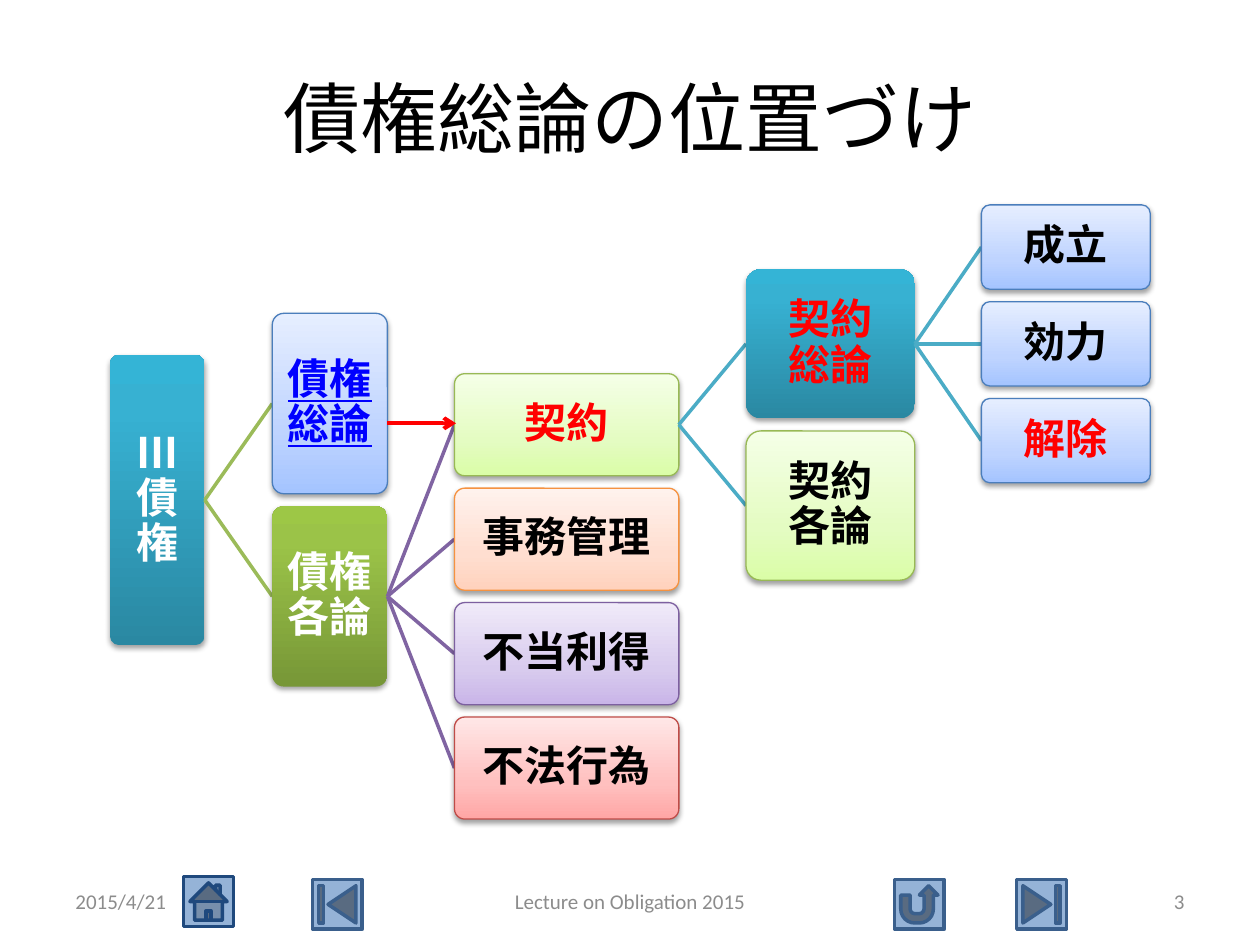
from dataclasses import dataclass, field

from pptx import Presentation
from pptx.dml.color import RGBColor
from pptx.enum import shapes, text
from pptx.oxml.ns import qn
from pptx.util import Pt
from lxml import etree


@dataclass(frozen=True)
class Skin:
    stops: tuple  # (position in percent, colour), from the bottom up
    line: str = ""


class Theme:
    font = "Calibri"
    title_size, node_size, footer_size = 44, 24, 12
    black, white, red, link = "000000", "FFFFFF", "FF0000", "0000FF"
    footer = "8C8C8C"
    button, button_line, home_line = "95B3D7", "3A5F8C", "1F497D"
    green_link, purple_link, aqua_link = "9BBB59", "8064A2", "4BACC6"
    teal = Skin(((0, "2A88A2"), (80, "37B1D2"), (100, "34B4D6")))
    olive = Skin(((0, "779737"), (80, "9BC348"), (100, "9DC746")))
    blue = Skin(((0, "A4C4FF"), (35, "BFD4FF"), (100, "E6EEFF")), "4B7EBC")
    lime = Skin(((0, "DAFDA7"), (35, "E4FCC2"), (100, "F5FFE7")), "98B955")
    orange = Skin(((0, "FFD2BD"), (35, "FFDED0"), (100, "FFF2ED")), "F69240")
    violet = Skin(((0, "C9B5E8"), (35, "D8CBEE"), (100, "F0EAF9")), "7D60A0")
    rose = Skin(((0, "FFA6A5"), (35, "FFC0BF"), (100, "FFE7E7")), "BF4C48")


@dataclass
class Node:
    lines: tuple
    skin: Skin
    color: str = Theme.black
    underline: bool = False
    children: list = field(default_factory=list)


@dataclass(frozen=True)
class Column:
    left: float
    width: float
    height: float
    link: str = ""  # colour of the branches to the next column


ALIGN = text.PP_ALIGN
GAP = 7.1  # between sibling boxes
COLUMNS = [
    Column(62.8, 54.2, 166, Theme.green_link),
    Column(155.6, 65.8, 103.1, Theme.purple_link),
    Column(259.7, 128.2, 58.3, Theme.aqua_link),
    Column(426.3, 96.5, 85.3, Theme.aqua_link),
    Column(560.8, 96.5, 48.2),
]


class SlideBuilder:
    def __init__(self, page, theme):
        self.page, self.theme = page, theme

    def add_words(self, frame, lines, size, color, align, bold=False, underline=False):
        frame.word_wrap = True
        frame.vertical_anchor = text.MSO_ANCHOR.MIDDLE
        para = frame.paragraphs[0]
        para.alignment = align
        for index, line in enumerate(lines):
            if index:
                para.add_line_break()
            span = para.add_run()
            span.text = line
            font = span.font
            font.name, font.size = self.theme.font, Pt(size)
            font.bold, font.underline = bold, underline
            font.color.rgb = RGBColor.from_string(color)
        return para

    def label(self, words, left, top, width, height, size, color, align):
        box = self.page.shapes.add_textbox(Pt(left), Pt(top), Pt(width), Pt(height))
        self.add_words(box.text_frame, [words], size, color, align)

    def button(self, kind, left, top, line):
        side = Pt(28.4)
        box = self.page.shapes.add_shape(kind, Pt(left), Pt(top), side, side)
        box.shadow.inherit = False
        box.fill.solid()
        box.fill.fore_color.rgb = RGBColor.from_string(self.theme.button)
        box.line.color.rgb = RGBColor.from_string(line)
        box.line.width = Pt(2)

    def connector(self, start, end, color, width, arrow=False):
        link = self.page.shapes.add_connector(
            shapes.MSO_CONNECTOR.STRAIGHT, *(Pt(value) for value in (*start, *end)))
        link.line.color.rgb = RGBColor.from_string(color)
        link.line.width = Pt(width)
        properties = link._element.spPr
        if arrow:
            etree.SubElement(properties.find(qn("a:ln")), qn("a:tailEnd"), type="arrow")
        etree.SubElement(properties, qn("a:effectLst"))

    def gradient(self, box, stops):
        box.fill.gradient()
        box.fill.gradient_angle = 90
        stop_list = box._element.spPr.find(".//" + qn("a:gsLst"))
        for stop in list(stop_list):
            stop_list.remove(stop)
        for position, color in stops:
            stop = etree.SubElement(stop_list, qn("a:gs"), pos=str(position * 1000))
            etree.SubElement(stop, qn("a:srgbClr"), val=color)

    def soft_shadow(self, box):
        box.shadow.inherit = False
        effects = box._element.spPr.find(qn("a:effectLst"))
        shadow = etree.SubElement(
            effects, qn("a:outerShdw"), blurRad=str(Pt(3.1)), dist=str(Pt(1.7)),
            dir="5400000", rotWithShape="0")
        color = etree.SubElement(shadow, qn("a:srgbClr"), val=self.theme.black)
        etree.SubElement(color, qn("a:alpha"), val="36000")

    def node(self, node, column, middle):
        box = self.page.shapes.add_shape(
            shapes.MSO_SHAPE.ROUNDED_RECTANGLE, Pt(column.left),
            Pt(middle - column.height / 2), Pt(column.width), Pt(column.height))
        box.adjustments[0] = 0.1
        self.gradient(box, node.skin.stops)
        if node.skin.line:
            box.line.color.rgb = RGBColor.from_string(node.skin.line)
            box.line.width = Pt(0.75)
        else:
            box.line.fill.background()
        self.soft_shadow(box)
        frame = box.text_frame
        frame.margin_left = frame.margin_right = Pt(1.2)
        frame.margin_top = frame.margin_bottom = Pt(1.2)
        para = self.add_words(frame, node.lines, self.theme.node_size, node.color,
                              ALIGN.CENTER, True, node.underline)
        para.line_spacing = 0.9

    def tree(self, node, middle, level=0):
        """Draw a node, then its children centred on it in the next column."""
        column = COLUMNS[level]
        self.node(node, column, middle)
        for index, child in enumerate(node.children):
            following = COLUMNS[level + 1]
            offset = index - (len(node.children) - 1) / 2
            child_middle = middle + offset * (following.height + GAP)
            self.connector((column.left + column.width, middle),
                           (following.left, child_middle), column.link, 2)
            self.tree(child, child_middle, level + 1)


def obligation_tree(theme):
    general_contract = Node(("契約", "総論"), theme.teal, theme.red, children=[
        Node(("成立",), theme.blue),
        Node(("効力",), theme.blue),
        Node(("解除",), theme.blue, theme.red),
    ])
    contract = Node(("契約",), theme.lime, theme.red, children=[
        general_contract,
        Node(("契約", "各論"), theme.lime),
    ])
    particular = Node(("債権", "各論"), theme.olive, theme.white, children=[
        contract,
        Node(("事務管理",), theme.orange),
        Node(("不当利得",), theme.violet),
        Node(("不法行為",), theme.rose),
    ])
    general = Node(("債権", "総論"), theme.blue, theme.link, underline=True)
    return Node(("Ⅲ", "債", "権"), theme.teal, theme.white,
                children=[general, particular])


def main():
    deck = Presentation()
    deck.slide_width, deck.slide_height = Pt(720), Pt(540)
    theme = Theme()
    builder = SlideBuilder(deck.slides.add_slide(deck.slide_layouts[6]), theme)

    # Navigation buttons
    kinds = shapes.MSO_SHAPE
    for kind, left, top, line in (
        (kinds.ACTION_BUTTON_BEGINNING, 178.6, 502.6, theme.button_line),
        (kinds.ACTION_BUTTON_END, 581, 502.6, theme.button_line),
        (kinds.ACTION_BUTTON_RETURN, 511.2, 502.6, theme.button_line),
        (kinds.ACTION_BUTTON_HOME, 105, 501, theme.home_line),
    ):
        builder.button(kind, left, top, line)

    # Tree of the law of obligations
    builder.tree(obligation_tree(theme), 285.7)

    # Title and footer
    builder.label("債権総論の位置づけ", 36, 21.6, 648, 90,
                  theme.title_size, theme.black, ALIGN.CENTER)
    for words, left, width, align in (
        ("2015/4/21", 36, 168, ALIGN.LEFT),
        ("Lecture on Obligation 2015", 246, 228, ALIGN.CENTER),
        ("3", 516, 168, ALIGN.RIGHT),
    ):
        builder.label(words, left, 500.5, width, 28.75,
                      theme.footer_size, theme.footer, align)

    # Arrow from the general part to contract
    builder.connector((221.4, 241.9), (260.6, 241.9), theme.red, 2.25, arrow=True)

    deck.save("out.pptx")


if __name__ == "__main__":
    main()
